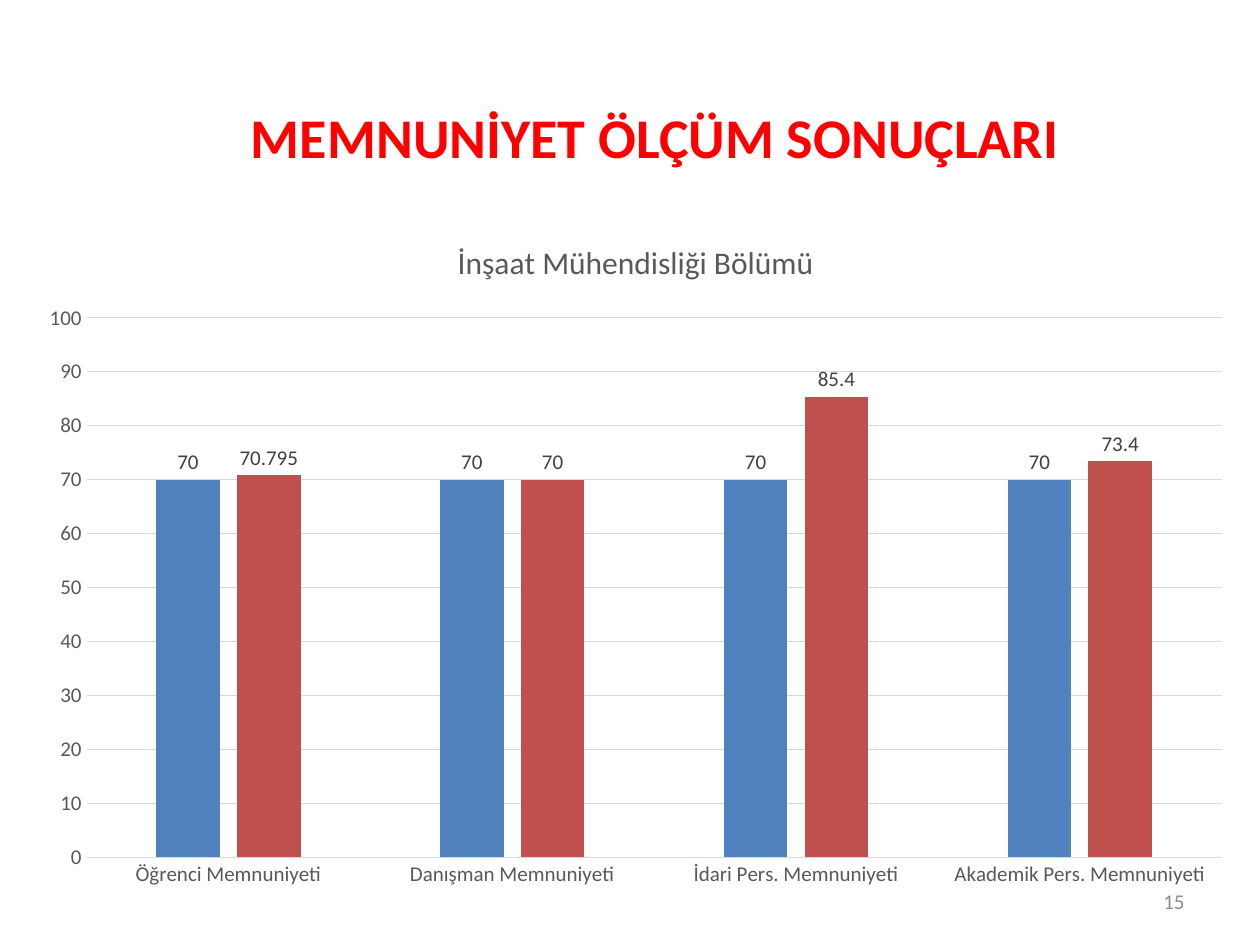
from pptx import Presentation
from pptx.chart.data import CategoryChartData
from pptx.dml.color import RGBColor
from pptx.enum.chart import XL_CHART_TYPE, XL_LABEL_POSITION, XL_TICK_MARK
from pptx.enum.text import MSO_ANCHOR, PP_ALIGN
from pptx.util import Inches, Pt

FONT = "Calibri"
COLORS = {
    "title": "FF0000",
    "number": "8C8C8C",
    "axis": "595959",
    "label": "404040",
    "grid": "D9D9D9",
    "target": "4F81BD",
    "result": "C0504D",
}
CATEGORIES = [
    "Öğrenci Memnuniyeti",
    "Danışman Memnuniyeti",
    "İdari Pers. Memnuniyeti",
    "Akademik Pers. Memnuniyeti",
]
SERIES = [
    ("Series 1", [70, 70, 70, 70], "target"),
    ("Series 2", [70.795, 70, 85.4, 73.4], "result"),
]


def color(name):
    """Return the named colour."""
    return RGBColor.from_string(COLORS[name])


def format_font(font, size, color_name, bold=False):
    """Set the typeface, size, colour and weight of a font."""
    font.name = FONT
    font.size = Pt(size)
    font.bold = bold
    font.color.rgb = color(color_name)


def write_text(frame, text, *, size, color_name, bold=False,
               align=PP_ALIGN.CENTER, anchor=MSO_ANCHOR.TOP):
    """Write one formatted paragraph into a text frame."""
    frame.word_wrap = True
    frame.vertical_anchor = anchor
    para = frame.paragraphs[0]
    para.alignment = align
    span = para.add_run()
    span.text = text
    format_font(span.font, size, color_name, bold)


def add_title(page, text):
    """Place and fill the title placeholder."""
    title = page.shapes.title
    title.left, title.top = Inches(0.75), Inches(0.76)
    title.width, title.height = Inches(8.9), Inches(0.64)
    write_text(title.text_frame, text, size=32, color_name="title", bold=True)


def add_page_number(page, text):
    """Add the page number at the lower right."""
    box = page.shapes.add_textbox(Inches(7.17), Inches(6.95), Inches(2.33), Inches(0.4))
    write_text(box.text_frame, text, size=12, color_name="number",
               align=PP_ALIGN.RIGHT, anchor=MSO_ANCHOR.MIDDLE)


def format_line(line):
    """Give a chart line the thin grid style."""
    line.color.rgb = color("grid")
    line.width = Pt(0.75)


def format_axes(chart):
    """Style both axes and the gridlines."""
    for axis in (chart.category_axis, chart.value_axis):
        axis.major_tick_mark = axis.minor_tick_mark = XL_TICK_MARK.NONE
        format_font(axis.tick_labels.font, 12, "axis")
    format_line(chart.category_axis.format.line)
    values = chart.value_axis
    values.minimum_scale, values.maximum_scale, values.major_unit = 0, 100, 10
    values.format.line.fill.background()
    format_line(values.major_gridlines.format.line)


def format_series(series, color_name):
    """Fill the columns of a series and label their values."""
    series.format.fill.solid()
    series.format.fill.fore_color.rgb = color(color_name)
    series.invert_if_negative = False
    labels = series.data_labels
    labels.show_value = True
    labels.position = XL_LABEL_POSITION.OUTSIDE_END
    format_font(labels.font, 12, "label")


def add_column_chart(page, title):
    """Add the clustered column chart of satisfaction scores."""
    data = CategoryChartData()
    data.categories = CATEGORIES
    for name, values, _ in SERIES:
        data.add_series(name, values)
    chart = page.shapes.add_chart(
        XL_CHART_TYPE.COLUMN_CLUSTERED,
        Inches(0.2), Inches(1.7), Inches(9.69), Inches(5.45), data,
    ).chart
    chart.font.name = FONT
    chart.font.size = Pt(10)
    chart.has_legend = False
    chart.has_title = True
    write_text(chart.chart_title.text_frame, title, size=18, color_name="axis")
    chart.chart_title.include_in_layout = False
    plot = chart.plots[0]
    plot.gap_width, plot.overlap = 219, -27
    plot.vary_by_categories = False
    format_axes(chart)
    for series, (_, _, color_name) in zip(plot.series, SERIES):
        format_series(series, color_name)


def main():
    """Build and save the deck."""
    deck = Presentation()
    deck.slide_width, deck.slide_height = Inches(10), Inches(7.5)
    page = deck.slides.add_slide(deck.slide_layouts[5])
    add_title(page, "MEMNUNİYET ÖLÇÜM SONUÇLARI")
    add_page_number(page, "15")
    add_column_chart(page, "İnşaat Mühendisliği Bölümü")
    deck.save("out.pptx")


if __name__ == "__main__":
    main()
